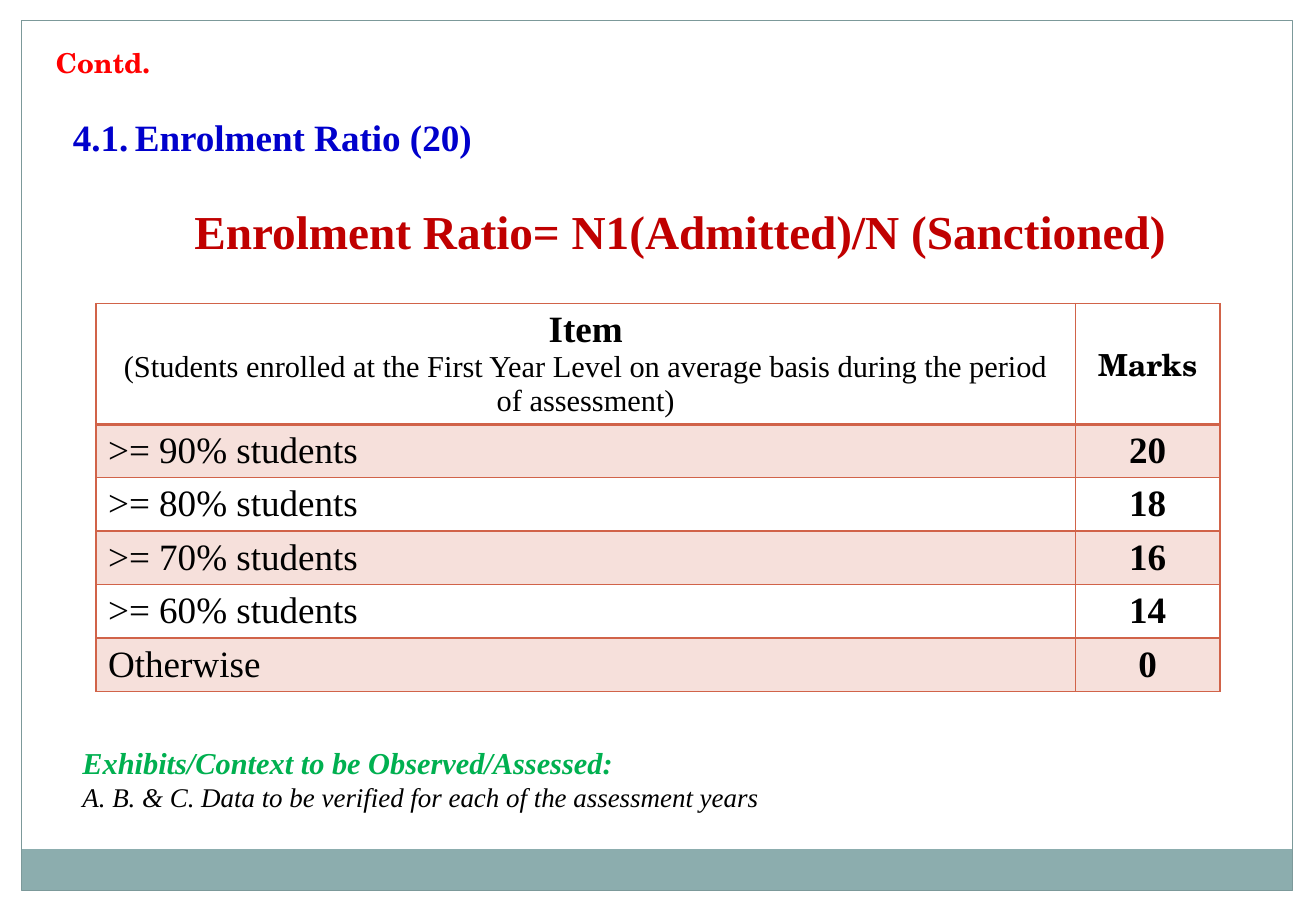
import pptx
import pptx.util
import pptx.oxml
import pptx.oxml.ns
import pptx.dml.color
import pptx.enum.shapes
import pptx.enum.text

Inches = pptx.util.Inches
Pt = pptx.util.Pt
RGB = pptx.dml.color.RGBColor
ALIGN = pptx.enum.text.PP_ALIGN
ANCHOR = pptx.enum.text.MSO_ANCHOR
RECT = pptx.enum.shapes.MSO_SHAPE.RECTANGLE

WIDE, HIGH = 10.83, 7.5
WHITE = RGB(0xFF, 0xFF, 0xFF)
BLACK = RGB(0x00, 0x00, 0x00)
RED = RGB(0xFF, 0x00, 0x00)
BLUE = RGB(0x00, 0x00, 0xCC)
CRIMSON = RGB(0xC0, 0x00, 0x00)
GREEN = RGB(0x00, 0xB0, 0x50)
TEAL = RGB(0x8C, 0xAD, 0xAE)
SLATE = RGB(0x7C, 0x99, 0x9A)
RUST = RGB(0xD1, 0x63, 0x49)
BLUSH = RGB(0xF6, 0xE0, 0xDB)
SERIF = "Times New Roman"
SCHOLA = "TeX Gyre Schola"

MARKS = [
    (">= 90% students", "20"),
    (">= 80% students", "18"),
    (">= 70% students", "16"),
    (">= 60% students", "14"),
    ("Otherwise", "0"),
]


def put(para, text, size, color=BLACK, bold=False, italic=False, font=SERIF):
    """Add one formatted run to a paragraph."""
    run = para.add_run()
    run.text = text
    run.font.size = Pt(size)
    run.font.name = font
    run.font.bold = bold
    run.font.italic = italic
    run.font.color.rgb = color


def place(shape, x, y, w, h):
    """Move a text shape and set its frame to wrap from the top."""
    shape.left, shape.top = Inches(x), Inches(y)
    shape.width, shape.height = Inches(w), Inches(h)
    frame = shape.text_frame
    frame.word_wrap = True
    frame.auto_size = pptx.enum.text.MSO_AUTO_SIZE.NONE
    frame.vertical_anchor = ANCHOR.TOP
    return frame


def plain(para, left, first=0):
    """Drop the bullet and set the indents of a paragraph."""
    props = para._p.get_or_add_pPr()
    props.set("marL", str(Inches(left)))
    props.set("indent", str(Inches(first)))
    props.append(pptx.oxml.parse_xml(
        f'<a:buNone {pptx.oxml.ns.nsdecls("a")}/>'))
    para.space_before = Pt(0)


def add_rect(slide, x, y, w, h, fill=None, line=None):
    """Add a flat rectangle with an optional fill and line."""
    shape = slide.shapes.add_shape(
        RECT, Inches(x), Inches(y), Inches(w), Inches(h))
    shape.shadow.inherit = False
    if fill is None:
        shape.fill.background()
    else:
        shape.fill.solid()
        shape.fill.fore_color.rgb = fill
    if line is None:
        shape.line.fill.background()
    else:
        shape.line.color.rgb = line
        shape.line.width = Pt(0.75)


def draw_frame(slide, x, y, w, h):
    """Draw the white margins, the footer band and the page border."""
    foot = 0.34
    add_rect(slide, 0, 0, WIDE, y, WHITE)
    add_rect(slide, WIDE - x, 0, x, HIGH, WHITE)
    add_rect(slide, 0, 0, x, HIGH, WHITE)
    add_rect(slide, x, y + h - foot, w, foot, TEAL)
    add_rect(slide, x, y, w, h, line=SLATE)


def draw_title(slide, x, y, w, h):
    """Fill the title."""
    para = place(slide.shapes.title, x, y, w, h).paragraphs[0]
    para.alignment = ALIGN.LEFT
    put(para, "Contd.", 16.2, RED, True, font=SCHOLA)


def draw_ratio(slide, x, y, w, h):
    """Fill the body with the criterion and its formula."""
    frame = place(slide.placeholders[1], x, y, w, h)
    head = frame.paragraphs[0]
    plain(head, 0.51, -0.51)
    put(head, "4.1.\tEnrolment Ratio (20)", 22, BLUE, True)
    rule = frame.add_paragraph()
    plain(rule, 1)
    rule.space_before = Pt(26)
    put(rule, "Enrolment Ratio= N1(Admitted)/N (Sanctioned)", 28, CRIMSON, True)


def style_cell(cell, filled, base):
    """Set the fill and the four borders of a table cell."""
    cell.vertical_anchor = ANCHOR.MIDDLE
    if filled:
        cell.fill.solid()
        cell.fill.fore_color.rgb = BLUSH
    else:
        cell.fill.background()
    props = cell._tc.get_or_add_tcPr()
    widths = {"L": 1, "R": 1, "T": base[0], "B": base[1]}
    for spot, (side, width) in enumerate(widths.items()):
        props.insert(spot, pptx.oxml.parse_xml(
            f'<a:ln{side} {pptx.oxml.ns.nsdecls("a")} w="{Pt(width)}">'
            f'<a:solidFill><a:srgbClr val="{RUST}"/></a:solidFill>'
            f'</a:ln{side}>'))


def draw_table(slide, x, y, w, h):
    """Build the marks table."""
    count = len(MARKS) + 1
    table = slide.shapes.add_table(
        count, 2, Inches(x), Inches(y), Inches(w), Inches(h)).table
    table.first_row = table.horz_banding = False
    mark, step = 1.19, 0.44
    table.columns[0].width = Inches(w - mark)
    table.columns[1].width = Inches(mark)
    for i, row in enumerate(table.rows):
        row.height = Inches(step if i else h - step * len(MARKS))
        base = (2 if i == 1 else 1, 1 if i else 2)
        for cell in row.cells:
            style_cell(cell, i % 2 == 1, base)
            cell.text_frame.paragraphs[0].alignment = ALIGN.CENTER
    item = table.cell(0, 0).text_frame
    put(item.paragraphs[0], "Item", 22, bold=True)
    note = item.add_paragraph()
    note.alignment = ALIGN.CENTER
    put(note, "(Students enrolled at the First Year Level on average basis "
        "during the period of assessment)", 18)
    put(table.cell(0, 1).text_frame.paragraphs[0], "Marks", 18,
        bold=True, font=SCHOLA)
    for i, (label, score) in enumerate(MARKS, 1):
        para = table.cell(i, 0).text_frame.paragraphs[0]
        para.alignment = ALIGN.JUSTIFY
        put(para, label, 22)
        put(table.cell(i, 1).text_frame.paragraphs[0], score, 22, bold=True)


def draw_notes(slide, x, y, w, h):
    """Write the exhibits to be observed."""
    box = slide.shapes.add_textbox(Inches(x), Inches(y), Inches(w), Inches(h))
    frame = place(box, x, y, w, h)
    head = frame.paragraphs[0]
    put(head, "Exhibits/Context to be Observed/Assessed:", 18, GREEN, True, True)
    line = frame.add_paragraph()
    put(line, "A. B. & C. Data to be verified for each of the assessment years",
        16, italic=True)
    head.alignment = line.alignment = ALIGN.JUSTIFY


def main():
    """Build the slide and save it."""
    deck = pptx.Presentation()
    deck.slide_width, deck.slide_height = Inches(WIDE), Inches(HIGH)
    slide = deck.slides.add_slide(deck.slide_layouts[1])
    draw_frame(slide, 0.18, 0.17, 10.46, 7.16)
    draw_table(slide, 0.79, 2.5, 9.25, 3.18)
    draw_ratio(slide, 0.5, 0.89, 9.83, 1.31)
    draw_title(slide, 0.36, 0.33, 10.11, 0.33)
    draw_notes(slide, 0.58, 6.08, 8.2, 0.67)
    deck.save("out.pptx")


if __name__ == "__main__":
    main()
